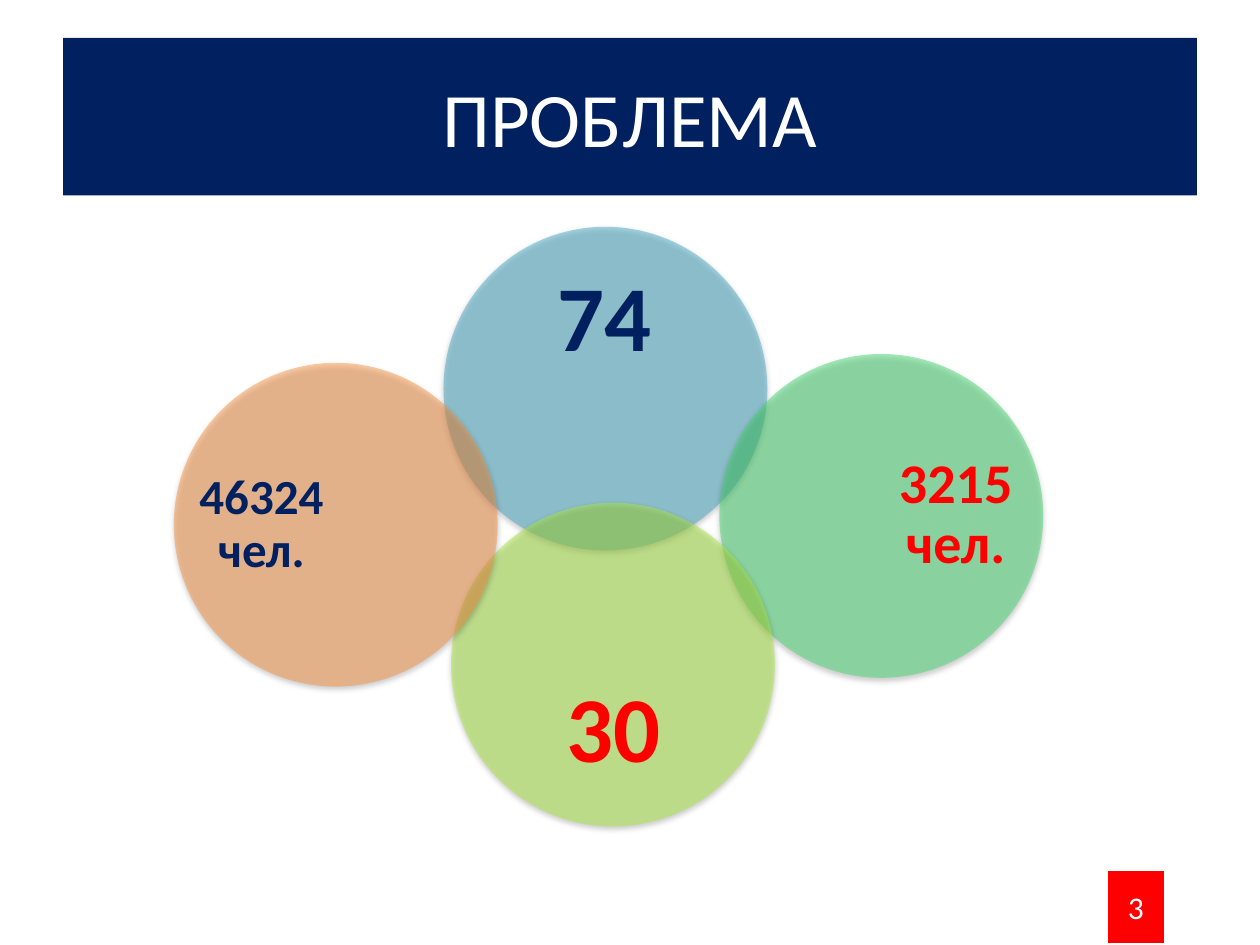
from lxml import etree
from pptx import Presentation
from pptx.dml.color import RGBColor
from pptx.enum import shapes, text
from pptx.oxml import parse_xml
from pptx.oxml.ns import nsdecls, qn
from pptx.util import Inches, Pt

NAVY, RED, WHITE = "002060", "FF0000", "FFFFFF"
DIAMETER = 2.57
SHADOW = (
    f'<a:effectLst {nsdecls("a")}>'
    '<a:outerShdw blurRad="40000" dist="20000" dir="5400000" rotWithShape="0">'
    '<a:srgbClr val="000000"><a:alpha val="38000"/></a:srgbClr>'
    '</a:outerShdw></a:effectLst>'
)


def paint(color_format, color):
    color_format.rgb = RGBColor.from_string(color)


def write(box, words, size, color, bold=False):
    frame = box.text_frame
    frame.word_wrap = True
    frame.vertical_anchor = text.MSO_ANCHOR.MIDDLE
    para = frame.paragraphs[0]
    para.text = words
    para.alignment = text.PP_ALIGN.CENTER
    para.font.name, para.font.size, para.font.bold = "Calibri", Pt(size), bold
    paint(para.font.color, color)
    return para


deck = Presentation()
deck.slide_width, deck.slide_height = Inches(10), Inches(7.5)
page = deck.slides.add_slide(deck.slide_layouts[5])

# Title band
title = page.shapes.title
title.left, title.top = Inches(0.5), Inches(0.3)
title.width, title.height = Inches(9), Inches(1.25)
title.fill.solid()
paint(title.fill.fore_color, NAVY)
write(title, "ПРОБЛЕМА", 44, WHITE)

# Overlapping circles: circle corner, fill, label, size, text colour, label place
circles = [
    ((3.52, 1.8), "4BACC6", "74", 53, NAVY, (3.81, 2.14, 1.98, 0.82)),
    ((5.71, 2.81), "47D872", "3215 чел.", 32, RED, (7.09, 3.1, 0.99, 1.98)),
    ((3.58, 3.99), "ACE946", "30", 53, RED, (3.88, 5.4, 1.98, 0.82)),
    ((1.38, 2.88), "F79646", "46324 чел.", 28, NAVY, (1.58, 3.18, 0.99, 1.98)),
]
for (left, top), fill, words, size, color, place in circles:
    circle = page.shapes.add_shape(
        shapes.MSO_SHAPE.OVAL, Inches(left), Inches(top), Inches(DIAMETER), Inches(DIAMETER))
    circle.fill.solid()
    paint(circle.fill.fore_color, fill)
    circle.line.fill.background()
    # Half-transparent fill and soft shadow below
    tint = circle.fill._xPr.find(qn("a:solidFill"))[0]
    etree.SubElement(tint, qn("a:alpha"), val="50000")
    circle._element.spPr.append(parse_xml(SHADOW))

    label = page.shapes.add_textbox(*map(Inches, place))
    frame = label.text_frame
    frame.margin_left = frame.margin_right = frame.margin_top = frame.margin_bottom = 0
    write(label, words, size, color, bold=True).line_spacing = 0.9

# Page number
number = page.shapes.add_shape(
    shapes.MSO_SHAPE.RECTANGLE, Inches(8.78), Inches(6.9), Inches(0.47), Inches(0.6))
number.shadow.inherit = False
number.fill.solid()
paint(number.fill.fore_color, RED)
paint(number.line.color, WHITE)
number.line.width = Pt(2)
write(number, "3", 18, WHITE)

deck.save("out.pptx")
